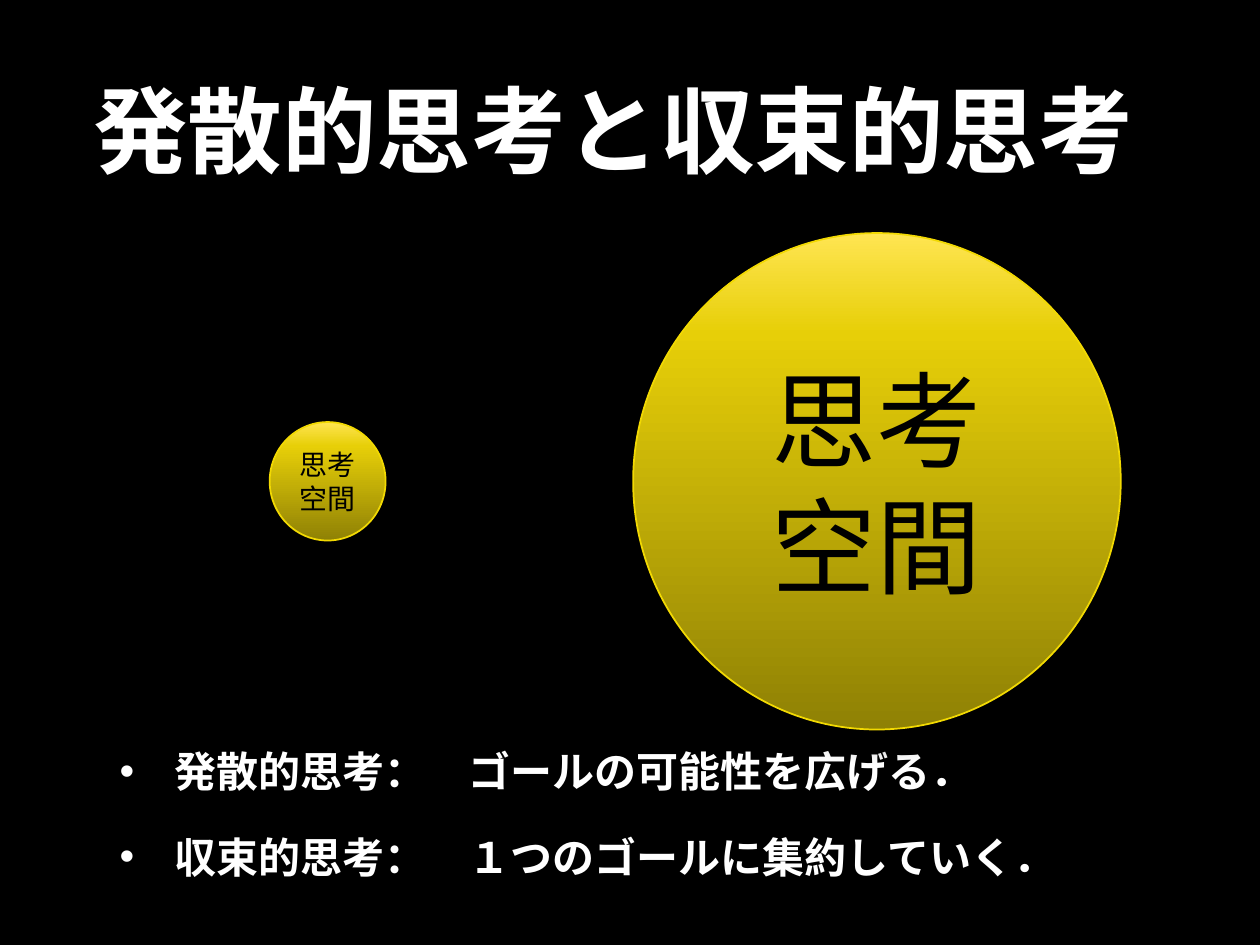
from lxml.etree import SubElement
from pptx import Presentation
from pptx.dml.color import RGBColor
from pptx.enum.shapes import MSO_SHAPE
from pptx.enum.text import MSO_ANCHOR, PP_ALIGN
from pptx.oxml.ns import qn
from pptx.util import Inches, Pt

COLORS = {
    "background": "000000", "light": "FFFFFF", "dark": "000000",
    "rim": "F2D902", "shadow": "000000",
    "base": "8F8105", "body": "E7CF08", "top": "FFE552",
}
FONT = "Calibri"
WIDTH, HEIGHT = 10, 7.5

TITLE = "発散的思考と収束的思考"
DEFINITIONS = [
    "発散的思考：　ゴールの可能性を広げる．",
    "収束的思考：　１つのゴールに集約していく．",
]
CENTER_Y = 3.82
# text, centre x, width, height, text size
THINKING_SPACES = [
    ("思考空間", 2.6, 0.92, 0.94, 16),
    ("思考\v空間", 6.96, 3.87, 3.94, 60),
]
GRADIENT = [(0, "base"), (80, "body"), (100, "top")]


def rgb(name):
    return RGBColor.from_string(COLORS[name])


def add_element(parent, tag, **attributes):
    return SubElement(parent, qn(tag), {k: str(v) for k, v in attributes.items()})


def write_text(frame, lines, size, color="light", bold=False, align=PP_ALIGN.LEFT,
               anchor=MSO_ANCHOR.TOP, bullet=None, indent=0, gap=0):
    frame.word_wrap = True
    frame.vertical_anchor = anchor
    for index, line in enumerate(lines):
        paragraph = frame.add_paragraph() if index else frame.paragraphs[0]
        paragraph.text = line
        paragraph.alignment = align
        if index:
            paragraph.space_before = Pt(gap)
        if bullet:
            properties = paragraph._p.get_or_add_pPr()
            properties.set("marL", str(Inches(indent)))
            properties.set("indent", str(-Inches(indent)))
            add_element(properties, "a:buFont", typeface="Arial")
            add_element(properties, "a:buChar", char=bullet)
        for run in paragraph.runs:
            run.font.name = FONT
            run.font.size = Pt(size)
            run.font.bold = bold
            run.font.color.rgb = rgb(color)


def add_text(slide, left, top, width, height, lines, **style):
    box = slide.shapes.add_textbox(*map(Inches, (left, top, width, height)))
    write_text(box.text_frame, lines, **style)


def add_glow_fill(shape):
    """Vertical three-stop gradient, darkest at the bottom."""
    shape.fill.gradient()
    shape.fill.gradient_angle = 90
    stops = shape._element.spPr.find(qn("a:gradFill")).find(qn("a:gsLst"))
    for stop in list(stops):
        stops.remove(stop)
    for position, name in GRADIENT:
        stop = add_element(stops, "a:gs", pos=position * 1000)
        add_element(stop, "a:srgbClr", val=COLORS[name])


def add_soft_shadow(shape):
    shape.shadow.inherit = False
    effects = shape._element.spPr.find(qn("a:effectLst"))
    shadow = add_element(effects, "a:outerShdw", blurRad=Pt(18), dist=Pt(3),
                         dir=90 * 60000, rotWithShape=0)
    color = add_element(shadow, "a:srgbClr", val=COLORS["shadow"])
    add_element(color, "a:alpha", val=80000)


def add_thinking_space(slide, text, center_x, width, height, size):
    circle = slide.shapes.add_shape(
        MSO_SHAPE.OVAL, Inches(center_x - width / 2), Inches(CENTER_Y - height / 2),
        Inches(width), Inches(height))
    add_glow_fill(circle)
    circle.line.color.rgb = rgb("rim")
    circle.line.width = Pt(1)
    add_soft_shadow(circle)
    frame = circle.text_frame
    frame.margin_left = frame.margin_right = 0
    write_text(frame, [text], size, color="dark", align=PP_ALIGN.CENTER,
               anchor=MSO_ANCHOR.MIDDLE)


def main():
    deck = Presentation()
    deck.slide_width, deck.slide_height = Inches(WIDTH), Inches(HEIGHT)
    slide = deck.slides.add_slide(deck.slide_layouts[6])
    slide.background.fill.solid()
    slide.background.fill.fore_color.rgb = rgb("background")

    add_text(slide, 0.59, 0.12, 8.55, 1.81, [TITLE], size=54, bold=True,
             align=PP_ALIGN.CENTER, anchor=MSO_ANCHOR.MIDDLE)
    add_text(slide, 0.85, 5.87, 8.29, 1.22, DEFINITIONS, size=24, bold=True,
             bullet="•", indent=0.44, gap=20)
    for space in THINKING_SPACES:
        add_thinking_space(slide, *space)
    deck.save("out.pptx")


if __name__ == "__main__":
    main()
